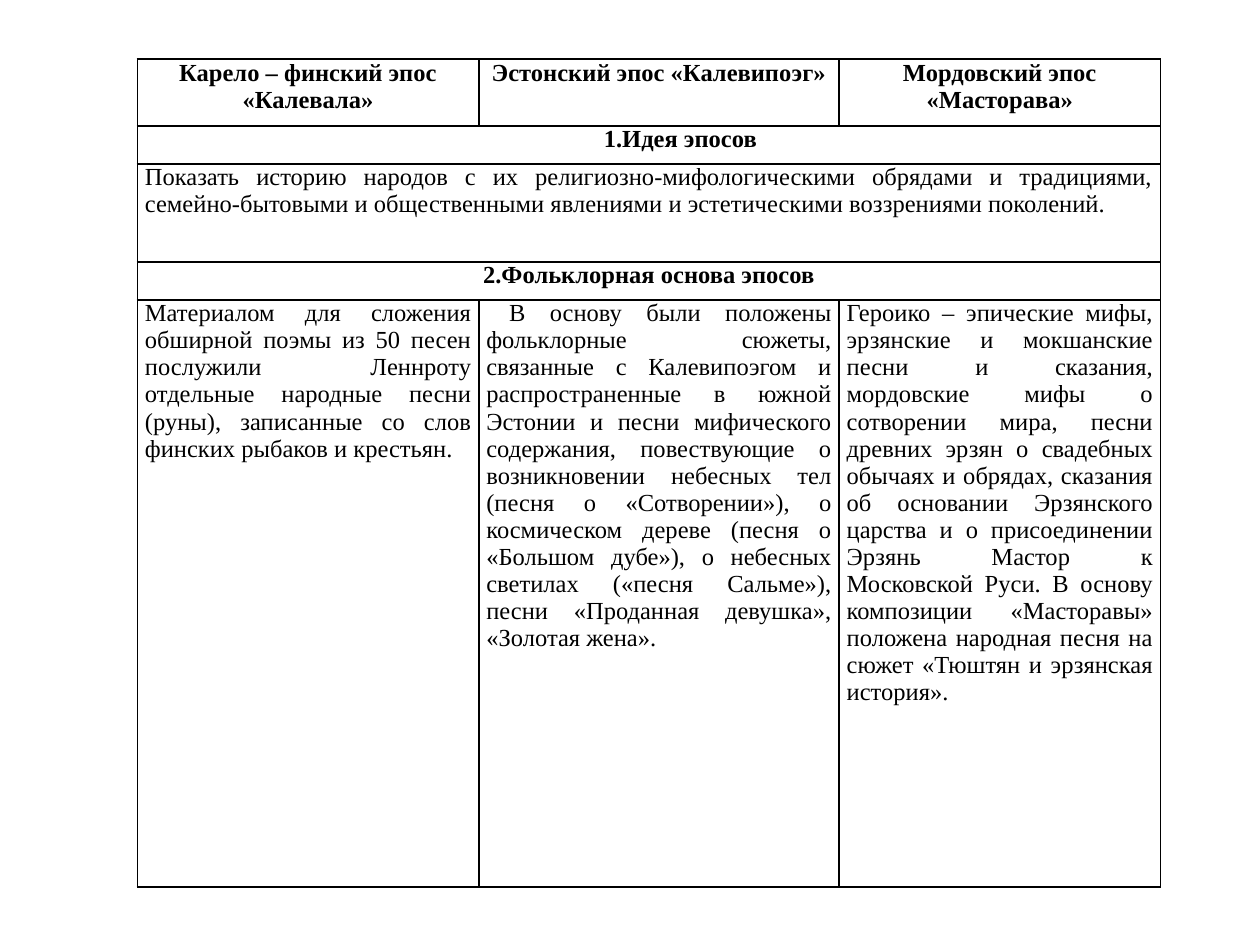
from dataclasses import dataclass

from lxml.etree import SubElement
from pptx import Presentation
from pptx.dml.color import RGBColor
from pptx.enum.text import PP_ALIGN
from pptx.oxml.ns import qn
from pptx.util import Inches, Pt


@dataclass(frozen=True)
class Theme:
    """Colours, type and line sizes of the slide."""
    ink: str = "000000"
    font: str = "Times New Roman"
    text_size: int = 14
    paragraph_gap: int = 6
    border_width: int = 1


THEME = Theme()
COLUMN_WIDTHS = (2.71, 2.86, 2.55)
ROW_HEIGHTS = (0.53, 0.3, 0.78, 0.3, 4.66)
EPICS = (
    "Карело – финский эпос «Калевала»",
    "Эстонский эпос «Калевипоэг»",
    "Мордовский эпос «Масторава»",
)
IDEA = (
    "Показать историю народов с их религиозно-мифологическими обрядами и "
    "традициями, семейно-бытовыми и общественными явлениями и эстетическими "
    "воззрениями поколений."
)
FOLKLORE_SOURCES = (
    "Материалом для сложения обширной поэмы из 50 песен послужили Леннроту "
    "отдельные народные песни (руны), записанные со слов финских рыбаков и "
    "крестьян.",
    "В основу были положены фольклорные сюжеты, связанные с Калевипоэгом и "
    "распространенные в южной Эстонии и песни мифического содержания, "
    "повествующие о возникновении небесных тел (песня о «Сотворении»), о "
    "космическом дереве (песня о «Большом дубе»), о небесных светилах "
    "(«песня Сальме»), песни «Проданная девушка», «Золотая жена».",
    "Героико – эпические мифы, эрзянские и мокшанские песни и сказания, "
    "мордовские мифы о сотворении мира, песни древних эрзян о свадебных "
    "обычаях и обрядах, сказания об основании Эрзянского царства и о "
    "присоединении Эрзянь Мастор к Московской Руси. В основу композиции "
    "«Масторавы» положена народная песня на сюжет «Тюштян и эрзянская "
    "история».",
)


def write_text(cell, text, bold=False, align=PP_ALIGN.JUSTIFY, left=0, indent=0):
    """Write one formatted paragraph into a cell."""
    paragraph = cell.text_frame.paragraphs[0]
    paragraph.text = text
    paragraph.alignment = align
    paragraph.space_after = Pt(THEME.paragraph_gap)
    properties = paragraph._p.get_or_add_pPr()
    properties.set("marL", str(Inches(left)))
    properties.set("indent", str(Inches(indent)))
    font = paragraph.runs[0].font
    font.name = THEME.font
    font.size = Pt(THEME.text_size)
    font.bold = bold
    font.color.rgb = RGBColor.from_string(THEME.ink)


def style_cell(cell):
    """Give a cell its margins, borders and empty fill."""
    cell.margin_left = cell.margin_right = Inches(0.06)
    cell.margin_top = cell.margin_bottom = 0
    properties = cell._tc.get_or_add_tcPr()
    for side in ("a:lnL", "a:lnR", "a:lnT", "a:lnB"):
        line = SubElement(properties, qn(side), w=str(Pt(THEME.border_width)))
        fill = SubElement(line, qn("a:solidFill"))
        SubElement(fill, qn("a:srgbClr"), val=THEME.ink)
    cell.fill.background()


def add_comparison_table(slide, left, top):
    """Place the table that compares the three epics."""
    frame = slide.shapes.add_table(
        len(ROW_HEIGHTS), len(COLUMN_WIDTHS), left, top,
        Inches(sum(COLUMN_WIDTHS)), Inches(sum(ROW_HEIGHTS)),
    )
    table = frame.table
    table.first_row = table.horz_banding = False
    for column, width in zip(table.columns, COLUMN_WIDTHS):
        column.width = Inches(width)
    for row, height in zip(table.rows, ROW_HEIGHTS):
        row.height = Inches(height)
    for cell in table.iter_cells():
        style_cell(cell)
    for row in (1, 2, 3):
        table.cell(row, 0).merge(table.cell(row, len(COLUMN_WIDTHS) - 1))

    heading = {"bold": True, "align": PP_ALIGN.CENTER}
    for column, epic in enumerate(EPICS):
        write_text(table.cell(0, column), epic, **heading)
    write_text(table.cell(1, 0), "1.Идея эпосов", left=0.5, **heading)
    write_text(table.cell(2, 0), IDEA)
    write_text(table.cell(3, 0), "2.Фольклорная основа эпосов", **heading)
    for column, (source, indent) in enumerate(zip(FOLKLORE_SOURCES, (0, 0.18, 0))):
        write_text(table.cell(4, column), source, indent=indent)


def main():
    """Build and save the presentation."""
    presentation = Presentation()
    presentation.slide_width = Inches(10)
    presentation.slide_height = Inches(7.5)
    slide = presentation.slides.add_slide(presentation.slide_layouts[6])
    add_comparison_table(slide, Inches(1.09), Inches(0.47))
    presentation.save("out.pptx")


if __name__ == "__main__":
    main()
